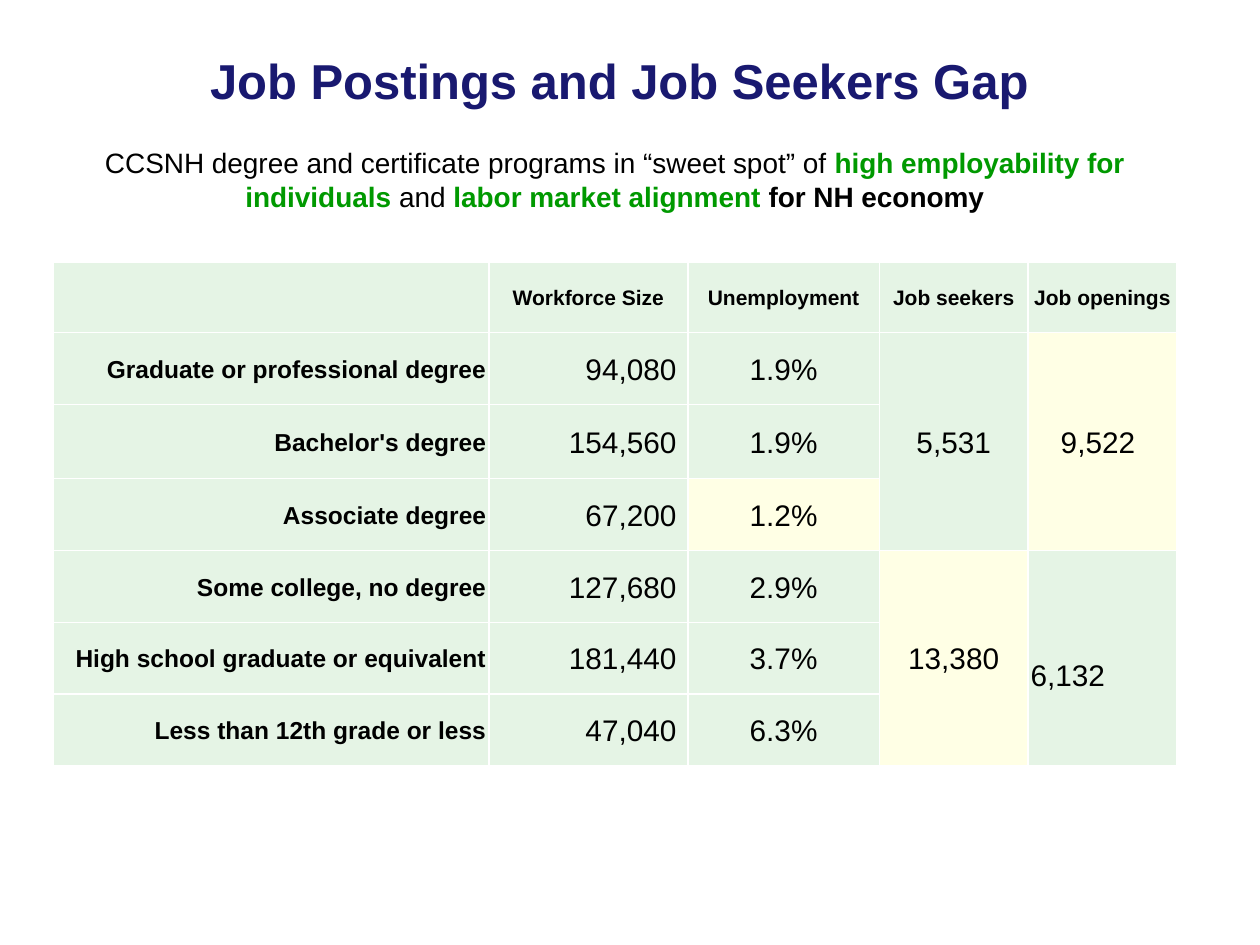
from lxml.etree import SubElement
from pptx import Presentation
from pptx.dml.color import RGBColor
from pptx.enum.text import MSO_ANCHOR as Anchor, PP_ALIGN as Align
from pptx.oxml import parse_xml
from pptx.oxml.ns import nsdecls, qn
from pptx.util import Inches, Pt

NAVY = RGBColor(0x19, 0x19, 0x70)
GREEN = RGBColor(0x00, 0x99, 0x00)
YELLOW = RGBColor(0xFF, 0xFF, 0x00)
BLACK = RGBColor(0x00, 0x00, 0x00)
WHITE = RGBColor(0xFF, 0xFF, 0xFF)

HEADINGS = ["", "Workforce Size", "Unemployment", "Job seekers", "Job openings"]
EDUCATION = [
    ("Graduate or professional degree", "94,080", "1.9%"),
    ("Bachelor's degree", "154,560", "1.9%"),
    ("Associate degree", "67,200", "1.2%"),
    ("Some college, no degree", "127,680", "2.9%"),
    ("High school graduate or equivalent", "181,440", "3.7%"),
    ("Less than 12th grade or less", "47,040", "6.3%"),
]


class GapSlide:
    font = "Arial"
    columns, rows = 100, 75

    def __init__(self, width=10, height=7.5):
        self.deck = Presentation()
        self.deck.slide_width = Inches(width)
        self.deck.slide_height = Inches(height)
        self.slide = self.deck.slides.add_slide(self.deck.slide_layouts[6])

    def x(self, columns):
        return round(self.deck.slide_width * columns / self.columns)

    def y(self, rows):
        return round(self.deck.slide_height * rows / self.rows)

    def style(self, run, size, color=BLACK, bold=False):
        run.font.name = self.font
        run.font.size = Pt(size)
        run.font.bold = bold
        run.font.color.rgb = color

    def text(self, left, top, width, height, size, parts, anchor=Anchor.TOP):
        box = self.slide.shapes.add_textbox(
            self.x(left), self.y(top), self.x(width), self.y(height))
        frame = box.text_frame
        frame.word_wrap = True
        frame.vertical_anchor = anchor
        paragraph = frame.paragraphs[0]
        paragraph.alignment = Align.CENTER
        for words, color, bold in parts:
            run = paragraph.add_run()
            run.text = words
            self.style(run, size, color, bold)

    def table(self, left, top, widths, heights):
        table = self.slide.shapes.add_table(
            len(heights), len(widths), self.x(left), self.y(top),
            self.x(sum(widths)), self.y(sum(heights))).table
        table.first_row = table.horz_banding = False
        for column, width in zip(table.columns, widths):
            column.width = self.x(width)
        for row, height in zip(table.rows, heights):
            row.height = self.y(height)
        for cell in table.iter_cells():
            self.fill(cell, GREEN, 10)
            self.border(cell)
        return table

    def fill(self, cell, color, opacity=100):
        cell.fill.solid()
        cell.fill.fore_color.rgb = color
        if opacity < 100:
            tint = next(cell._tc.tcPr.iter(qn("a:srgbClr")))
            SubElement(tint, qn("a:alpha"), val=str(opacity * 1000))

    def border(self, cell):
        for place, side in enumerate("LRTB"):
            cell._tc.tcPr.insert(place, parse_xml(
                f'<a:ln{side} {nsdecls("a")} w="12700"><a:solidFill>'
                f'<a:srgbClr val="{WHITE}"/></a:solidFill></a:ln{side}>'))

    def entry(self, cell, words, size=17, align=Align.CENTER, bold=False,
              right=0.2, top=0.2):
        cell.margin_left = self.x(0.2)
        cell.margin_right = self.x(right)
        cell.margin_top = self.y(top)
        cell.margin_bottom = 0
        cell.vertical_anchor = Anchor.MIDDLE
        cell.text_frame.text = words
        paragraph = cell.text_frame.paragraphs[0]
        paragraph.alignment = align
        for run in paragraph.runs:
            self.style(run, size, bold=bold)

    def span(self, table, row, column, words, color=None, **layout):
        cell = table.cell(row, column)
        cell.merge(table.cell(row + 2, column))
        self.entry(cell, words, **layout)
        if color is not None:
            self.fill(cell, color)


def main():
    page = GapSlide()
    page.text(10.8, 3, 76.7, 6.7, 28,
              [("Job Postings and Job Seekers Gap", NAVY, True)], Anchor.MIDDLE)
    gap = page.table(4.2, 20.8, [34.6, 15.8, 15.2, 11.8, 11.8],
                     [5.6, 5.7, 5.9] + [5.7] * 4)
    for column, heading in enumerate(HEADINGS):
        page.entry(gap.cell(0, column), heading, 12, bold=True)
    for row, (level, workforce, unemployment) in enumerate(EDUCATION, 1):
        page.entry(gap.cell(row, 0), level, 14, Align.RIGHT, True)
        page.entry(gap.cell(row, 1), workforce, align=Align.RIGHT, right=0.9)
        page.entry(gap.cell(row, 2), unemployment)
    page.fill(gap.cell(3, 2), YELLOW, 10)
    page.span(gap, 1, 3, "5,531")
    page.span(gap, 1, 4, "9,522", YELLOW, right=0.9)
    page.span(gap, 4, 3, "13,380", YELLOW)
    page.span(gap, 4, 4, "6,132", align=Align.LEFT, top=2.9)
    page.text(3.8, 11.1, 90, 6.4, 16, [
        ("CCSNH degree and certificate programs in “sweet spot” of ", BLACK, False),
        ("high employability for individuals ", GREEN, True),
        ("and ", BLACK, False),
        ("labor market alignment ", GREEN, True),
        ("for NH economy", BLACK, True),
    ])
    page.deck.save("out.pptx")


if __name__ == "__main__":
    main()
